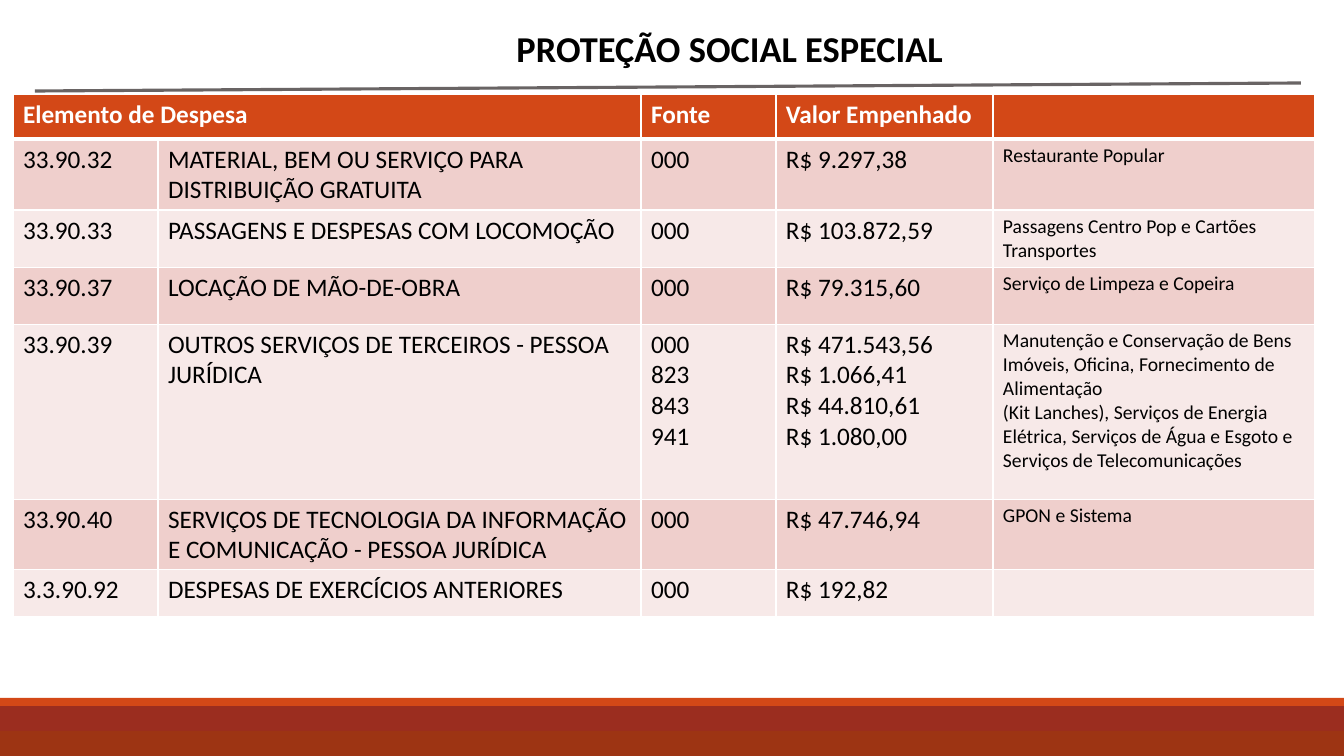
import pptx
import pptx.dml.color
import pptx.enum.shapes
import pptx.enum.text
import pptx.oxml
import pptx.oxml.ns
import pptx.util
import lxml.etree

EMU_PER_PX = 914400 / 100.8
FONT = "Calibri"
COLUMN_WIDTHS = [145, 483, 135, 217, 322]
ROW_HEIGHTS = [45, 71, 57, 57, 175, 70, 47]
HEADER = ["Elemento de Despesa", "", "Fonte", "Valor Empenhado", ""]
EXPENSES = [
    ["33.90.32", "MATERIAL, BEM OU SERVIÇO PARA DISTRIBUIÇÃO GRATUITA", "000",
     "R$ 9.297,38", "Restaurante Popular"],
    ["33.90.33", "PASSAGENS E DESPESAS COM LOCOMOÇÃO", "000",
     "R$ 103.872,59", "Passagens Centro Pop e Cartões Transportes"],
    ["33.90.37", "LOCAÇÃO DE MÃO-DE-OBRA", "000",
     "R$ 79.315,60", "Serviço de Limpeza e Copeira"],
    ["33.90.39", "OUTROS SERVIÇOS DE TERCEIROS - PESSOA JURÍDICA",
     "000\n823\n843\n941",
     "R$ 471.543,56\nR$ 1.066,41\nR$ 44.810,61\nR$ 1.080,00",
     "Manutenção e Conservação de Bens Imóveis, Oficina, Fornecimento de Alimentação\n"
     "(Kit Lanches), Serviços de Energia Elétrica, Serviços de Água e Esgoto e "
     "Serviços de Telecomunicações"],
    ["33.90.40", "SERVIÇOS DE TECNOLOGIA DA INFORMAÇÃO E COMUNICAÇÃO - PESSOA JURÍDICA",
     "000", "R$ 47.746,94", "GPON e Sistema"],
    ["3.3.90.92", "DESPESAS DE EXERCÍCIOS ANTERIORES", "000", "R$ 192,82", ""],
]


def px(length):
    return pptx.util.Emu(round(length * EMU_PER_PX))


def color(hex_string):
    return pptx.dml.color.RGBColor.from_string(hex_string)


def apply_format(target, values):
    for name, value in values.items():
        setattr(target, name, value)


def write_text(text_frame, text, size, hex_string, bold=False, alignment=None):
    text_frame.text = text
    for paragraph in text_frame.paragraphs:
        paragraph.alignment = alignment
        apply_format(paragraph.font, {"name": FONT, "size": pptx.util.Pt(size), "bold": bold})
        for run in paragraph.runs:
            apply_format(run.font, {"name": FONT, "size": pptx.util.Pt(size), "bold": bold})
            run.font.color.rgb = color(hex_string)


def add_bar(slide, left, top, width, height, fill, opacity=100):
    shape = slide.shapes.add_shape(
        pptx.enum.shapes.MSO_SHAPE.RECTANGLE, px(left), px(top), px(width), px(height))
    shape.shadow.inherit = False
    shape.fill.solid()
    shape.fill.fore_color.rgb = color(fill)
    shape.line.fill.background()
    if opacity < 100:
        solid_color = shape.fill._xPr.find(".//" + pptx.oxml.ns.qn("a:srgbClr"))
        alpha = lxml.etree.SubElement(solid_color, pptx.oxml.ns.qn("a:alpha"))
        alpha.set("val", str(opacity * 1000))


def add_footer(slide, left, top, width, height):
    strip = 8
    band = height - strip
    add_bar(slide, left, top + strip, width, band, "9B2D1F")
    add_bar(slide, left, top, width, strip, "D34817")
    add_bar(slide, left, top + strip + band // 2, width, band // 2, "9E3611", 85)


def add_title(slide, left, top, width, height):
    box = slide.shapes.add_textbox(px(left + 469), px(top), px(452), px(54))
    box.text_frame.word_wrap = True
    write_text(box.text_frame, "PROTEÇÃO SOCIAL ESPECIAL", 26, "000000", True,
               pptx.enum.text.PP_ALIGN.CENTER)
    bottom = top + height
    rule = slide.shapes.add_connector(
        pptx.enum.shapes.MSO_CONNECTOR.STRAIGHT,
        px(left), px(bottom), px(left + width), px(bottom - 8))
    rule.line.color.rgb = color("696464")
    rule.line.width = pptx.util.Pt(2.25)
    lxml.etree.SubElement(rule._element.spPr, pptx.oxml.ns.qn("a:effectLst"))


def set_borders(cell, bottom_width):
    properties = cell._tc.get_or_add_tcPr()
    for side, width in (("L", 1), ("R", 1), ("T", 1), ("B", bottom_width)):
        border = lxml.etree.SubElement(properties, pptx.oxml.ns.qn("a:ln" + side))
        border.set("w", str(pptx.util.Pt(width)))
        fill = lxml.etree.SubElement(border, pptx.oxml.ns.qn("a:solidFill"))
        lxml.etree.SubElement(fill, pptx.oxml.ns.qn("a:srgbClr")).set("val", "FFFFFF")


def add_expense_table(slide, left, top):
    rows = [HEADER] + EXPENSES
    table = slide.shapes.add_table(
        len(rows), len(HEADER), px(left), px(top),
        px(sum(COLUMN_WIDTHS)), px(sum(ROW_HEIGHTS))).table
    for column, width in zip(table.columns, COLUMN_WIDTHS):
        column.width = px(width)
    for row_index, texts in enumerate(rows):
        table.rows[row_index].height = px(ROW_HEIGHTS[row_index])
        is_header = row_index == 0
        fill = "D34817" if is_header else ("F7E9E8", "EFCFCC")[row_index % 2]
        for column_index, text in enumerate(texts):
            cell = table.cell(row_index, column_index)
            set_borders(cell, 3 if is_header else 1)
            cell.fill.solid()
            cell.fill.fore_color.rgb = color(fill)
            size = 14 if column_index == 4 and not is_header else 18
            write_text(cell.text_frame, text, size,
                       "FFFFFF" if is_header else "000000", is_header)
    table.cell(0, 0).merge(table.cell(0, 1))


def main():
    presentation = pptx.Presentation()
    apply_format(presentation, {"slide_width": px(1344), "slide_height": px(756)})
    slide = presentation.slides.add_slide(presentation.slide_layouts[6])
    add_footer(slide, 0, 698, 1344, 58)
    add_title(slide, 35, 21, 1266, 70)
    add_expense_table(slide, 13, 94)
    presentation.save("out.pptx")


if __name__ == "__main__":
    main()
